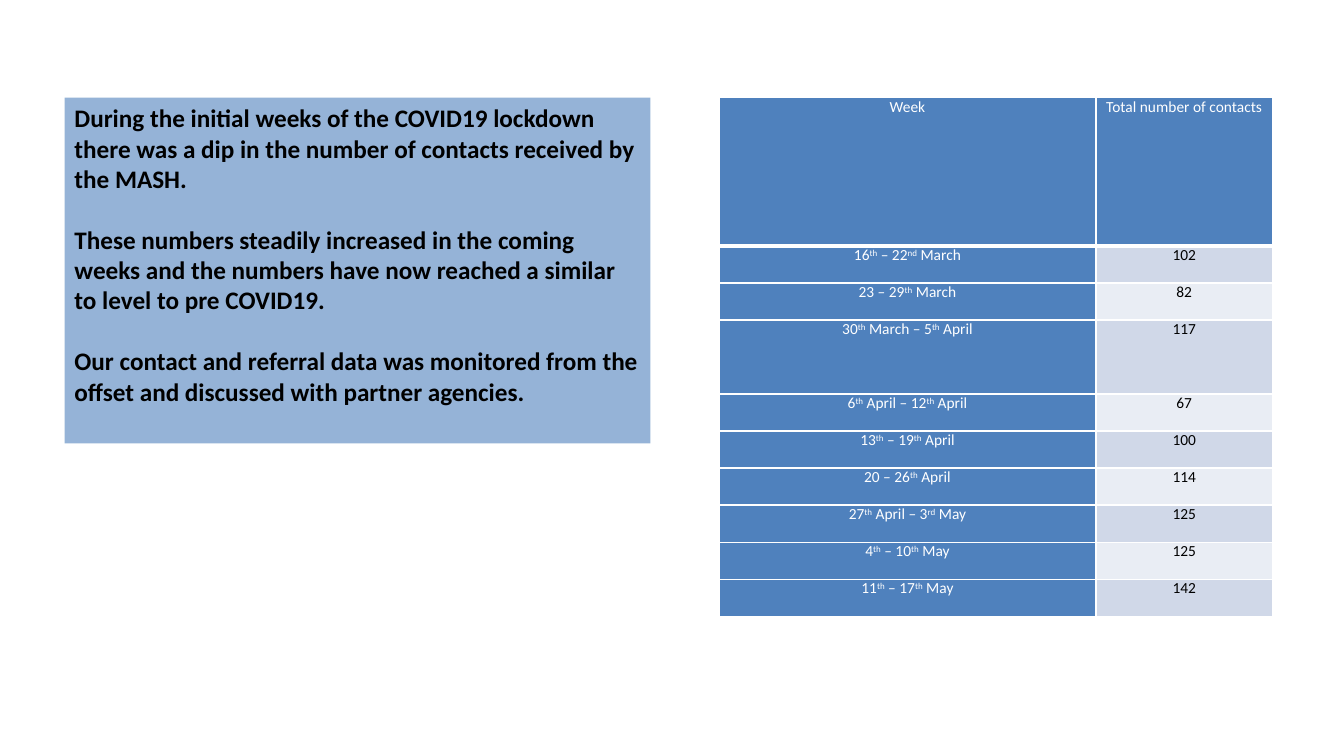
import dataclasses

import lxml.etree
import pptx
import pptx.dml.color
import pptx.enum.shapes
import pptx.enum.text
import pptx.oxml.ns
import pptx.presentation
import pptx.shapes.autoshape
import pptx.slide
import pptx.table
import pptx.text.text
import pptx.util

RGBColor = pptx.dml.color.RGBColor
BLACK = RGBColor(0x00, 0x00, 0x00)
WHITE = RGBColor(0xFF, 0xFF, 0xFF)
PANEL_BLUE = RGBColor(0x95, 0xB3, 0xD7)
HEADER_BLUE = RGBColor(0x4F, 0x81, 0xBD)
BANDS = (RGBColor(0xD0, 0xD8, 0xE8), RGBColor(0xE9, 0xED, 0xF4))

SLIDE_WIDTH = pptx.util.Inches(13.33)
SLIDE_HEIGHT = pptx.util.Inches(7.5)
FONT = "Calibri"
TOP = 12.93
ROW_HEIGHT = 4.9
COLUMN_WIDTHS = (28.06, 13.13)
SUPERSCRIPT = "30000"


@dataclasses.dataclass(frozen=True)
class Box:
    left: float
    top: float
    width: float
    height: float


@dataclasses.dataclass(frozen=True)
class ContactRow:
    week: str
    contacts: str
    height_units: int = 1


PANEL = Box(4.8, TOP, 43.59, 45.73)
PARAGRAPHS = (
    "During the initial weeks of the COVID19 lockdown there was a dip in the number of contacts received by the MASH.",
    "These numbers steadily increased in the coming weeks and the numbers have now reached a similar to level to pre COVID19.",
    "Our contact and referral data was monitored from the offset and discussed with partner agencies.",
)
CONTACT_ROWS = (
    ContactRow("Week", "Total number of contacts", 4),
    ContactRow("16^th^ – 22^nd^ March", "102"),
    ContactRow("23 – 29^th^ March", "82"),
    ContactRow("30^th^ March – 5^th^ April", "117", 2),
    ContactRow("6^th^ April – 12^th^ April", "67"),
    ContactRow("13^th^ – 19^th^ April", "100"),
    ContactRow("20 – 26^th^ April", "114"),
    ContactRow("27^th^ April – 3^rd^ May", "125"),
    ContactRow("4^th^ – 10^th^ May", "125"),
    ContactRow("11^th^ – 17^th^ May", "142"),
)
TABLE = Box(
    53.49,
    TOP,
    sum(COLUMN_WIDTHS),
    ROW_HEIGHT * sum(row.height_units for row in CONTACT_ROWS),
)


def across(percent: float) -> int:
    return round(SLIDE_WIDTH * percent / 100)


def down(percent: float) -> int:
    return round(SLIDE_HEIGHT * percent / 100)


def place(box: Box) -> tuple[int, int, int, int]:
    return across(box.left), down(box.top), across(box.width), down(box.height)


def add_run(p: pptx.text.text._Paragraph, text: str, size: int, color: RGBColor,
            bold: bool = False) -> pptx.text.text._Run:
    r = p.add_run()
    r.text = text
    r.font.name = FONT
    r.font.size = pptx.util.Pt(size)
    r.font.bold = bold
    r.font.color.rgb = color
    return r


def add_panel(slide: pptx.slide.Slide) -> None:
    sp = slide.shapes.add_shape(pptx.enum.shapes.MSO_SHAPE.RECTANGLE, *place(PANEL))
    sp.shadow.inherit = False
    sp.fill.solid()
    sp.fill.fore_color.rgb = PANEL_BLUE
    sp.line.fill.background()
    tf = sp.text_frame
    tf.word_wrap = True
    tf.vertical_anchor = pptx.enum.text.MSO_ANCHOR.TOP
    for index, text in enumerate(PARAGRAPHS):
        p = tf.add_paragraph() if index else tf.paragraphs[0]
        p.alignment = pptx.enum.text.PP_ALIGN.LEFT
        if index:
            p.space_before = pptx.util.Pt(22)
        add_run(p, text, 18, BLACK, bold=True)


def add_borders(cell: pptx.table._Cell, bottom_width: int) -> None:
    qn = pptx.oxml.ns.qn
    tc_pr = cell._tc.get_or_add_tcPr()
    widths = {"a:lnL": 1, "a:lnR": 1, "a:lnT": 1, "a:lnB": bottom_width}
    for index, (tag, width) in enumerate(widths.items()):
        ln = lxml.etree.Element(qn(tag), w=str(pptx.util.Pt(width)))
        fill = lxml.etree.SubElement(ln, qn("a:solidFill"))
        lxml.etree.SubElement(fill, qn("a:srgbClr"), val=str(WHITE))
        tc_pr.insert(index, ln)


def fill_cell(cell: pptx.table._Cell, text: str, fill: RGBColor, color: RGBColor,
              bottom_width: int) -> None:
    cell.margin_left = cell.margin_right = pptx.util.Inches(0.07)
    cell.margin_top = cell.margin_bottom = 0
    cell.fill.solid()
    cell.fill.fore_color.rgb = fill
    add_borders(cell, bottom_width)
    p = cell.text_frame.paragraphs[0]
    p.alignment = pptx.enum.text.PP_ALIGN.CENTER
    for index, part in enumerate(text.split("^")):
        r = add_run(p, part, 11, color)
        if index % 2:
            r._r.get_or_add_rPr().set("baseline", SUPERSCRIPT)


def add_contact_table(slide: pptx.slide.Slide) -> None:
    frame = slide.shapes.add_table(len(CONTACT_ROWS), len(COLUMN_WIDTHS), *place(TABLE))
    table = frame.table
    table.horz_banding = False
    for column, width in zip(table.columns, COLUMN_WIDTHS):
        column.width = across(width)
    for index, row in enumerate(CONTACT_ROWS):
        table.rows[index].height = down(ROW_HEIGHT * row.height_units)
        is_header = index == 0
        bottom_width = 3 if is_header else 1
        value_fill = HEADER_BLUE if is_header else BANDS[(index - 1) % len(BANDS)]
        value_color = WHITE if is_header else BLACK
        fill_cell(table.cell(index, 0), row.week, HEADER_BLUE, WHITE, bottom_width)
        fill_cell(table.cell(index, 1), row.contacts, value_fill, value_color, bottom_width)


def main() -> None:
    prs = pptx.Presentation()
    prs.slide_width = SLIDE_WIDTH
    prs.slide_height = SLIDE_HEIGHT
    slide = prs.slides.add_slide(prs.slide_layouts[6])
    add_panel(slide)
    add_contact_table(slide)
    prs.save("out.pptx")


if __name__ == "__main__":
    main()
